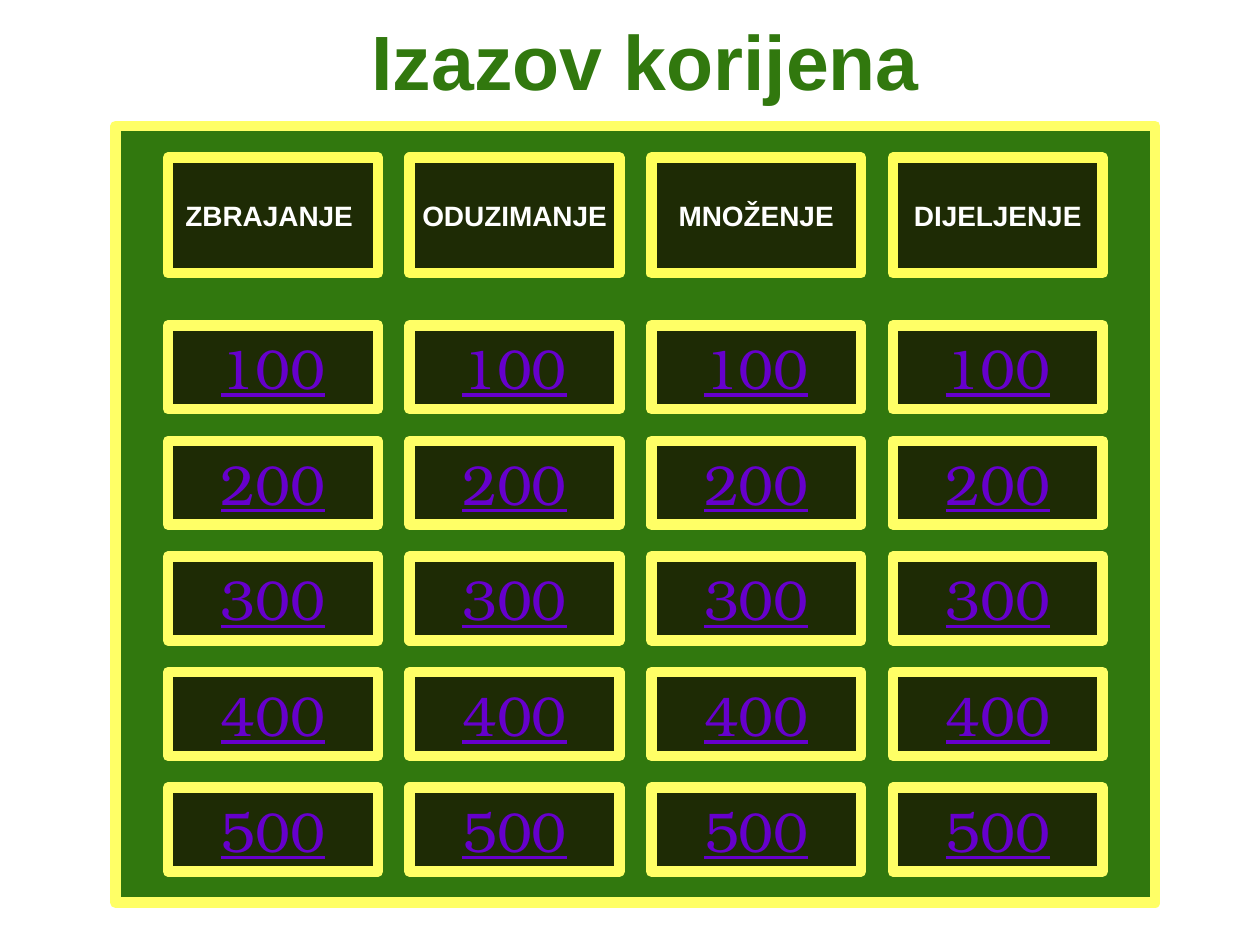
from pptx import Presentation
from pptx.dml.color import RGBColor
from pptx.enum.shapes import MSO_SHAPE as Shape
from pptx.enum.text import MSO_ANCHOR as Anchor, PP_ALIGN as Align
from pptx.util import Cm, Pt

GREEN, DARK, YELLOW, LIGHT_YELLOW = "31780E", "1E2B05", "FFFF66", "FFFF59"
WHITE, PURPLE = "FFFFFF", "6600CC"
CATEGORIES = ["ZBRAJANJE ", "ODUZIMANJE", "MNOŽENJE", "DIJELJENJE"]
VALUES = ["100", "200", "300", "400", "500"]
GRID_LEFT, COLUMN_STEP, CELL_WIDTH = 3.39, 4.87, 4.23
HEADER_TOP, HEADER_HEIGHT = 3.18, 2.33
VALUE_TOP, ROW_STEP, VALUE_HEIGHT = 6.56, 2.33, 1.69


def color(value):
    """Return the colour for a hex string."""
    return RGBColor.from_string(value)


def add_panel(page, left, top, width, height, fill, line):
    """Add a filled rectangle with a thick border."""
    panel = page.shapes.add_shape(Shape.RECTANGLE, Cm(left), Cm(top), Cm(width), Cm(height))
    panel.shadow.inherit = False
    panel.fill.solid()
    panel.fill.fore_color.rgb = color(fill)
    panel.line.color.rgb = color(line)
    panel.line.width = Pt(6)
    return panel


def write(box, text, font, size, ink, anchor=Anchor.MIDDLE, wrap=False, bold=False, underline=False):
    """Write one centred line of text in a shape."""
    frame = box.text_frame
    frame.text = text
    frame.word_wrap = wrap
    frame.vertical_anchor = anchor
    para = frame.paragraphs[0]
    para.alignment = Align.CENTER
    span = para.runs[0]
    span.font.name = font
    span.font.size = Pt(size)
    span.font.bold = bold
    span.font.underline = underline
    span.font.color.rgb = color(ink)
    return para


def add_category(page, left, text):
    """Add the heading cell of a column."""
    cell = add_panel(page, left, HEADER_TOP, CELL_WIDTH, HEADER_HEIGHT, DARK, LIGHT_YELLOW)
    write(cell, text, "Arial", 16, WHITE, bold=True)


def add_value(page, left, top, text):
    """Add a cell with a point value."""
    cell = add_panel(page, left, top, CELL_WIDTH, VALUE_HEIGHT, DARK, YELLOW)
    write(cell, text, "TeX Gyre Bonum", 32, PURPLE, underline=True)


def add_title(page, text):
    """Add the slide title."""
    box = page.shapes.add_textbox(Cm(1.9), Cm(-0.64), Cm(22.23), Cm(2.92))
    para = write(box, text, "Arial", 44, GREEN, anchor=Anchor.BOTTOM, wrap=True, bold=True)
    para.line_spacing = 0.9


def main():
    """Build the game board and save it."""
    deck = Presentation()
    deck.slide_width, deck.slide_height = Cm(25.4), Cm(19.05)
    page = deck.slides.add_slide(deck.slide_layouts[6])
    add_panel(page, 2.33, 2.54, 20.96, 15.66, GREEN, YELLOW)
    lefts = [GRID_LEFT + column * COLUMN_STEP for column in range(len(CATEGORIES))]
    for left, category in zip(lefts, CATEGORIES):
        add_category(page, left, category)
    for row, value in enumerate(VALUES):
        for left in lefts:
            add_value(page, left, VALUE_TOP + row * ROW_STEP, value)
    add_title(page, "Izazov korijena")
    deck.save("out.pptx")


if __name__ == "__main__":
    main()
